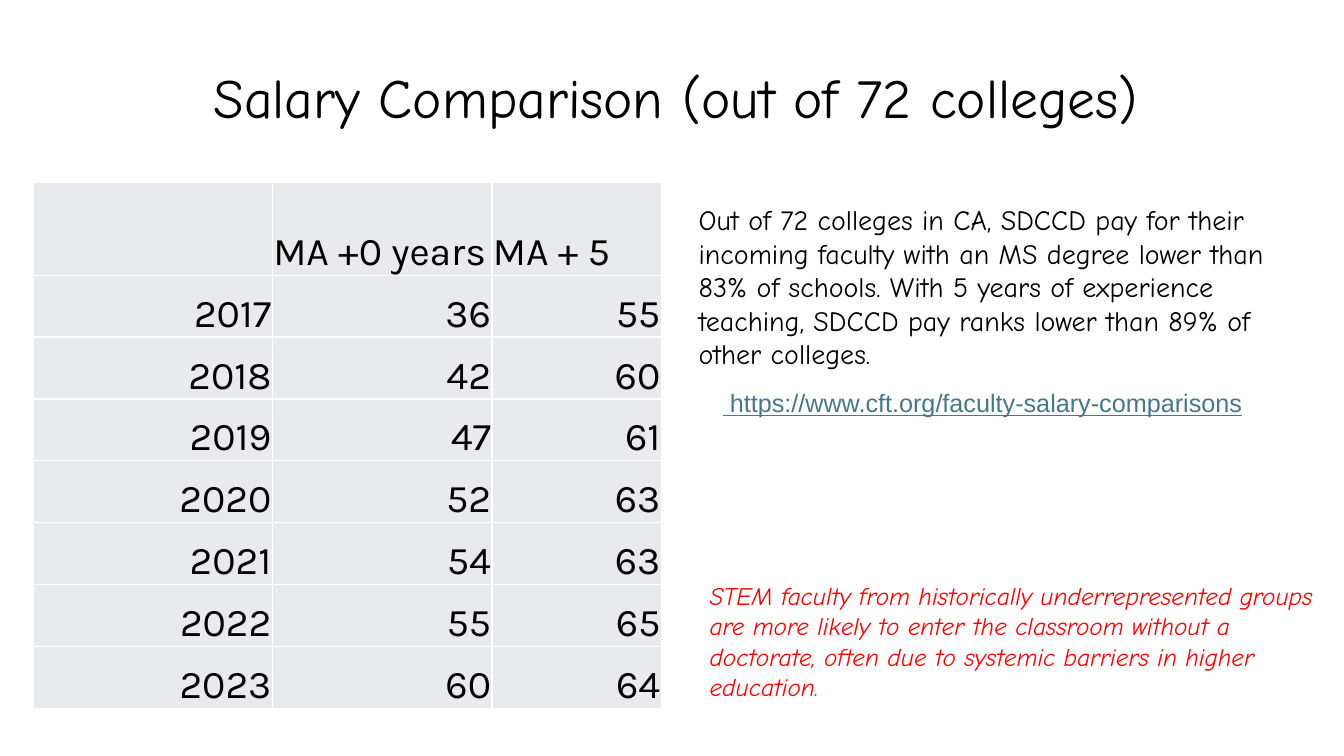
from dataclasses import dataclass

from lxml.etree import SubElement
from pptx import Presentation
from pptx.dml.color import RGBColor
from pptx.enum.text import MSO_ANCHOR, PP_ALIGN
from pptx.oxml.ns import qn
from pptx.util import Inches, Pt

SLIDE_W, SLIDE_H = Inches(13.33), Inches(7.5)


@dataclass(frozen=True)
class Theme:
    ink: str = "000000"
    link: str = "467886"
    alert: str = "FF0000"
    cell: str = "E8EAED"
    rule: str = "FFFFFF"
    hand: str = "Comic Neue"
    figures: str = "Karla"
    plain: str = "Arial"
    title_size: float = 39.6
    table_size: float = 28
    body_size: float = 20
    note_size: float = 18


THEME = Theme()

HEADER = ("", "MA +0 years", "MA + 5")
RANKS = (
    (2017, 36, 55),
    (2018, 42, 60),
    (2019, 47, 61),
    (2020, 52, 63),
    (2021, 54, 63),
    (2022, 55, 65),
    (2023, 60, 64),
)


# Lengths are percentages of the slide's width and height
def across(share):
    return round(SLIDE_W * share / 100)


def down(share):
    return round(SLIDE_H * share / 100)


def box_at(left, top, width, height):
    return across(left), down(top), across(width), down(height)


def write(p, text, *, size, font=THEME.hand, color=THEME.ink, italic=False,
          underline=False, align=PP_ALIGN.LEFT, indent=0, after=0, spacing=1.0):
    p.alignment = align
    p.space_after = Pt(after)
    p.line_spacing = spacing
    if indent:
        p._p.get_or_add_pPr().set("marL", str(Inches(indent)))
    r = p.add_run()
    r.text = text
    r.font.size = Pt(size)
    r.font.name = font
    r.font.color.rgb = RGBColor.from_string(color)
    r.font.italic = italic
    r.font.underline = underline


def add_text_frame(slide, box, anchor=MSO_ANCHOR.TOP):
    tf = slide.shapes.add_textbox(*box).text_frame
    tf.word_wrap = True
    tf.vertical_anchor = anchor
    return tf


def add_borders(cell):
    tc_pr = cell._tc.get_or_add_tcPr()
    for position, side in enumerate(("a:lnL", "a:lnR", "a:lnT", "a:lnB")):
        ln = SubElement(tc_pr, qn(side), w=str(Pt(1)))
        fill = SubElement(ln, qn("a:solidFill"))
        SubElement(fill, qn("a:srgbClr"), val=THEME.rule)
        tc_pr.insert(position, ln)


def fill_cell(cell, text, align):
    cell.fill.solid()
    cell.fill.fore_color.rgb = RGBColor.from_string(THEME.cell)
    cell.vertical_anchor = MSO_ANCHOR.BOTTOM
    cell.margin_left = cell.margin_right = cell.margin_top = Inches(0.01)
    cell.margin_bottom = 0
    add_borders(cell)
    if text:
        write(cell.text_frame.paragraphs[0], text, size=THEME.table_size,
              font=THEME.figures, align=align)


def add_rank_table(slide, box, col_shares, header_share, row_share):
    rows = (HEADER, *RANKS)
    table = slide.shapes.add_table(len(rows), len(HEADER), *box).table
    for col, share in zip(table.columns, col_shares):
        col.width = across(share)
    for i, values in enumerate(rows):
        table.rows[i].height = down(row_share if i else header_share)
        align = PP_ALIGN.RIGHT if i else PP_ALIGN.LEFT
        for j, value in enumerate(values):
            fill_cell(table.cell(i, j), str(value), align)


def main():
    prs = Presentation()
    prs.slide_width, prs.slide_height = SLIDE_W, SLIDE_H
    slide = prs.slides.add_slide(prs.slide_layouts[6])

    # Title, raised a little above the middle of its box
    tf = add_text_frame(slide, box_at(6.9, 5.33, 86.27, 19.33), MSO_ANCHOR.MIDDLE)
    tf.margin_bottom = Inches(0.31)
    write(tf.paragraphs[0], "Salary Comparison (out of 72 colleges)",
          size=THEME.title_size, indent=1.1, spacing=0.9)

    # Ranking by year
    add_rank_table(slide, box_at(2.48, 24.13, 46.73, 69.6),
                   col_shares=(17.78, 16.35, 12.6),
                   header_share=12.27, row_share=8.19)

    # Explanation and its web address
    tf = add_text_frame(slide, box_at(47.49, 26.13, 51.24, 34.13))
    write(tf.paragraphs[0],
          "Out of 72 colleges in CA, SDCCD pay for their incoming faculty with an "
          "MS degree lower than 83% of schools. With 5 years of experience teaching, "
          "SDCCD pay ranks lower than 89% of other colleges.",
          size=THEME.body_size, indent=0.5, after=12)
    write(tf.add_paragraph(), " https://www.cft.org/faculty-salary-comparisons",
          size=THEME.note_size, font=THEME.plain, color=THEME.link,
          underline=True, align=PP_ALIGN.CENTER)

    # Remark in red
    tf = add_text_frame(slide, box_at(52.06, 76.13, 46.66, 17.47))
    write(tf.paragraphs[0],
          "STEM faculty from historically underrepresented groups are more likely "
          "to enter the classroom without a doctorate, often due to systemic "
          "barriers in higher education.",
          size=THEME.note_size, color=THEME.alert, italic=True)

    prs.save("out.pptx")


if __name__ == "__main__":
    main()
